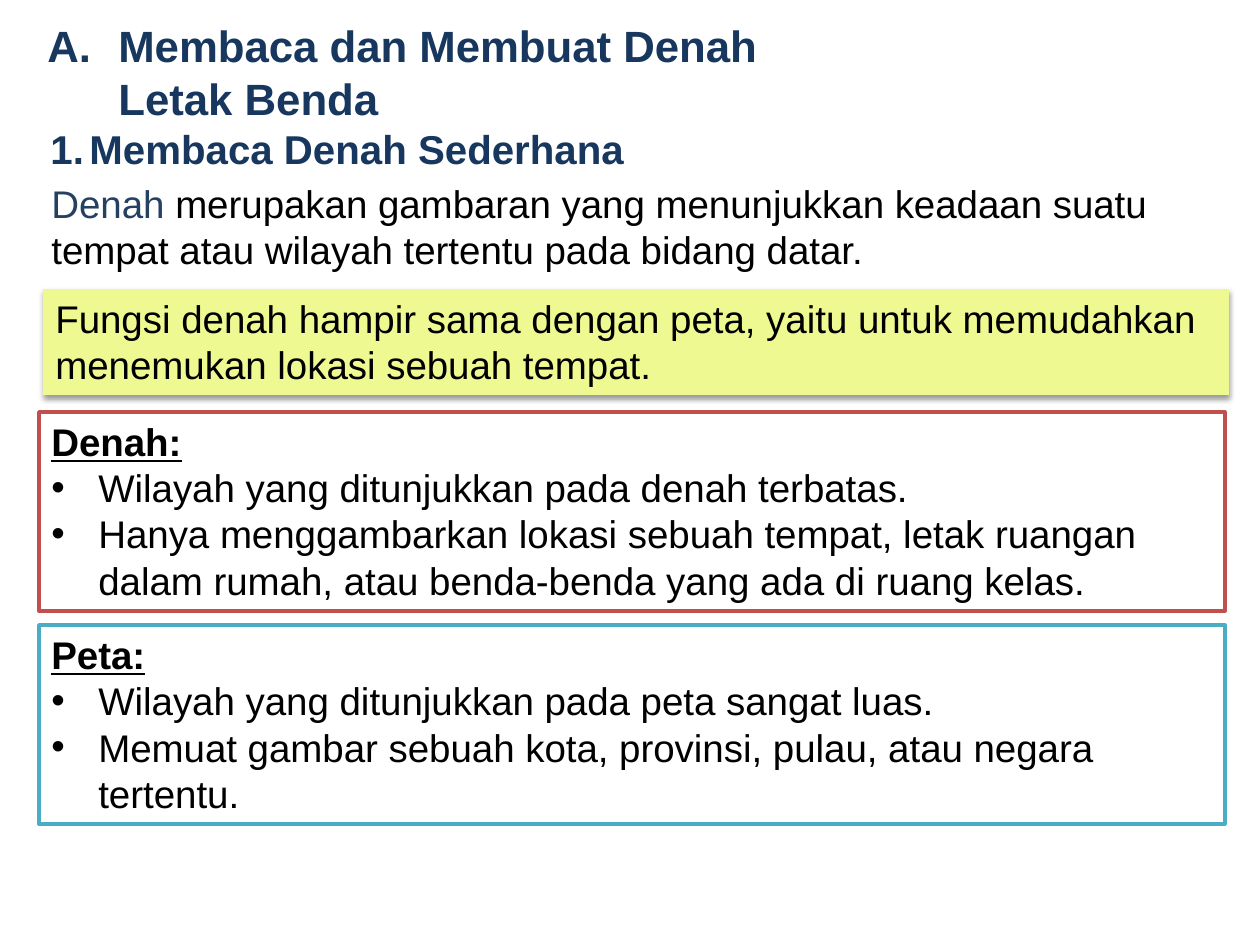
from lxml.etree import SubElement
from pptx import Presentation
from pptx.dml.color import RGBColor
from pptx.enum.shapes import MSO_SHAPE
from pptx.enum.text import MSO_ANCHOR, MSO_AUTO_SIZE, PP_ALIGN
from pptx.oxml.ns import qn
from pptx.util import Emu, Pt

EMU_PER_PX = 914400 / 126
NAVY, BLUE, BLACK, WHITE = "17375E", "254061", "000000", "FFFFFF"
RED, TEAL, LIME = "C0504D", "4BACC6", "EFF991"


def px(n):
    return Emu(round(n * EMU_PER_PX))


def color(value):
    return RGBColor.from_string(value)


class Deck:
    FONT = "Arial"
    FRAME = dict(word_wrap=True, auto_size=MSO_AUTO_SIZE.SHAPE_TO_FIT_TEXT,
                 vertical_anchor=MSO_ANCHOR.TOP)

    def __init__(self, width, height):
        self.prs = Presentation()
        self.prs.slide_width, self.prs.slide_height = px(width), px(height)
        self.s = self.prs.slides.add_slide(self.prs.slide_layouts[6])

    def frame(self, sp):
        for name, value in self.FRAME.items():
            setattr(sp.text_frame, name, value)
        return sp.text_frame

    def textbox(self, *box):
        return self.frame(self.s.shapes.add_textbox(*map(px, box)))

    def panel(self, *box, fill=WHITE, line=None, shadow=False):
        sp = self.s.shapes.add_shape(MSO_SHAPE.RECTANGLE, *map(px, box))
        sp.fill.solid()
        sp.fill.fore_color.rgb = color(fill)
        if line:
            sp.line.color.rgb = color(line)
            sp.line.width = Pt(2)
        else:
            sp.line.fill.background()
        sp.shadow.inherit = False
        if shadow:
            self.drop_shadow(sp)
        return self.frame(sp)

    def drop_shadow(self, sp):
        effects = sp._element.spPr.find(qn("a:effectLst"))
        outer = SubElement(effects, qn("a:outerShdw"), blurRad="40000",
                           dist="20000", dir="5400000", rotWithShape="0")
        black = SubElement(outer, qn("a:srgbClr"), val=BLACK)
        SubElement(black, qn("a:alpha"), val="38000")

    def para(self, tf, *runs, left=0, hang=0, bullet=None, size=22, **font):
        """Add a paragraph of (text, colour) runs; bullet is a character or a numbering type."""
        p = tf.paragraphs[0]
        if p.runs:
            p = tf.add_paragraph()
        p.alignment = PP_ALIGN.LEFT
        pPr = p._p.get_or_add_pPr()
        pPr.set("marL", str(px(left)))
        pPr.set("indent", str(px(-hang)))
        if bullet == "•":
            SubElement(pPr, qn("a:buFont"), typeface=self.FONT)
            SubElement(pPr, qn("a:buChar"), char=bullet)
        elif bullet:
            SubElement(pPr, qn("a:buFont"), typeface="+mj-lt")
            SubElement(pPr, qn("a:buAutoNum"), type=bullet)
        for text, rgb in runs:
            r = p.add_run()
            r.text = text
            r.font.color.rgb = color(rgb)
            for name, value in dict(font, name=self.FONT, size=Pt(size)).items():
                setattr(r.font, name, value)

    def list_panel(self, top, line, heading, items):
        tf = self.panel(39, top, 1186, 199, line=line)
        self.para(tf, (heading, BLACK), bold=True, underline=True)
        for item in items:
            self.para(tf, (item, BLACK), left=47, hang=47, bullet="•")


def main():
    deck = Deck(1260, 945)

    tf = deck.textbox(35, 13, 1135, 123)
    title = dict(left=71, size=25, bold=True)
    deck.para(tf, ("Membaca dan Membuat Denah", NAVY), hang=71,
              bullet="alphaUcPeriod", **title)
    deck.para(tf, ("Letak Benda", NAVY), **title)

    tf = deck.textbox(15, 118, 701, 63)
    deck.para(tf, ("Membaca Denah Sederhana", NAVY), left=62, hang=39,
              bullet="arabicPeriod", size=23, bold=True)

    tf = deck.panel(39, 174, 1186, 106)
    deck.para(tf, ("Denah ", BLUE),
              ("merupakan gambaran yang menunjukkan keadaan suatu tempat "
               "atau wilayah tertentu pada bidang datar.", BLACK))

    deck.list_panel(625, TEAL, "Peta:", [
        "Wilayah yang ditunjukkan pada peta sangat luas.",
        "Memuat gambar sebuah kota, provinsi, pulau, atau negara tertentu."])
    deck.list_panel(412, RED, "Denah:", [
        "Wilayah yang ditunjukkan pada denah terbatas.",
        "Hanya menggambarkan lokasi sebuah tempat, letak ruangan dalam rumah, "
        "atau benda-benda yang ada di ruang kelas."])

    tf = deck.panel(43, 289, 1186, 106, fill=LIME, shadow=True)
    deck.para(tf, ("Fungsi denah hampir sama dengan peta, yaitu untuk "
                   "memudahkan menemukan lokasi sebuah tempat.", BLACK))

    deck.prs.save("out.pptx")


if __name__ == "__main__":
    main()
